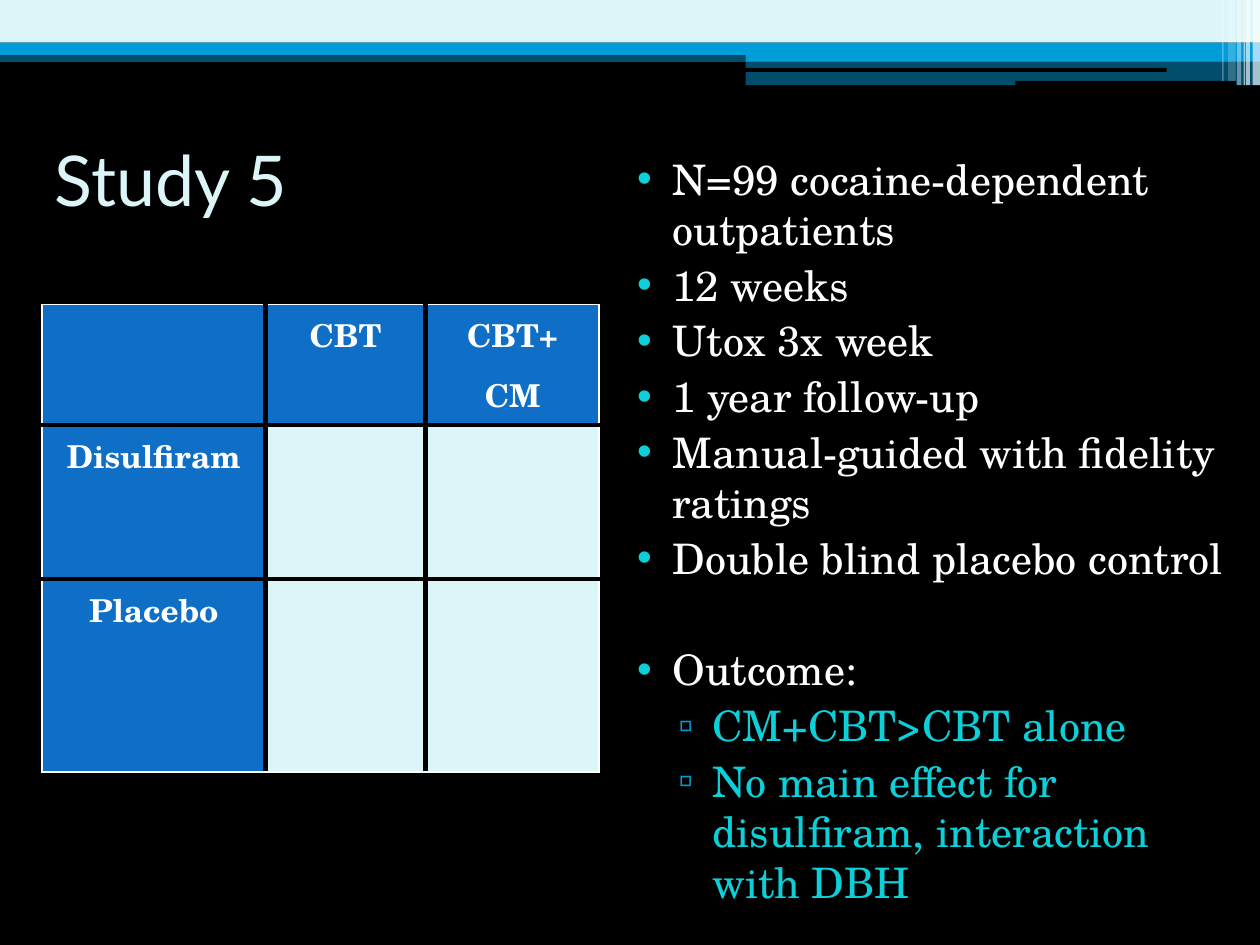
import pptx
import pptx.util
import pptx.dml.color
import pptx.enum.shapes
import pptx.enum.text
import pptx.oxml
import pptx.oxml.ns
import lxml.etree

Cm = pptx.util.Cm
Pt = pptx.util.Pt
SHAPE = pptx.enum.shapes.MSO_SHAPE
ALIGN = pptx.enum.text.PP_ALIGN
ANCHOR = pptx.enum.text.MSO_ANCHOR

BLACK, WHITE = "000000", "FFFFFF"
PALE, BLUE, SKY, AQUA = "DBF5F9", "0F6FC6", "009DD9", "0BD0D9"
SERIF = "TeX Gyre Schola"


def rgb(value):
    return pptx.dml.color.RGBColor.from_string(value)


def sub(parent, tag, **attrs):
    el = lxml.etree.SubElement(parent, pptx.oxml.ns.qn(tag))
    for name, value in attrs.items():
        el.set(name, str(value))
    return el


def add_text(p, text, font=SERIF, size=24, color=WHITE, bold=False,
             align=ALIGN.LEFT, before=0, after=0):
    p.alignment = align
    p.space_before, p.space_after = Pt(before), Pt(after)
    r = p.add_run()
    r.text = text
    r.font.name, r.font.size, r.font.bold = font, Pt(size), bold
    r.font.color.rgb = rgb(color)


def add_bullet(p, char, color, left, hanging):
    pPr = p._p.get_or_add_pPr()
    pPr.set("marL", str(Cm(left)))
    pPr.set("indent", str(-Cm(hanging)))
    sub(sub(pPr, "a:buClr"), "a:srgbClr", val=color)
    sub(pPr, "a:buFont", typeface="Arial")
    sub(pPr, "a:buChar", char=char)


def place(sp, box):
    sp.left, sp.top, sp.width, sp.height = (Cm(v) for v in box)


def add_block(s, box, color, alpha=100, kind=SHAPE.RECTANGLE):
    sp = s.shapes.add_shape(kind, *(Cm(v) for v in box))
    sp.shadow.inherit = False
    sp.line.fill.background()
    sp.fill.solid()
    sp.fill.fore_color.rgb = rgb(color)
    if alpha < 100:
        clr = sp._element.spPr.find(".//" + pptx.oxml.ns.qn("a:srgbClr"))
        sub(clr, "a:alpha", val=alpha * 1000)


def add_banner(s, box):
    x, y, w, h = box
    half = 15.03
    add_block(s, (x, y + 1.02, w, 0.23), SKY, 50)
    add_block(s, (x, y, w, 0.86), PALE)
    add_block(s, (x, y + 0.86, w, 0.25), SKY)
    add_block(s, (x + half, y + 0.99, w - half, 0.25), SKY)
    add_block(s, (x + half, y + 1.23, w - half, h - 1.23), SKY, 50)
    for left, top, width, height in ((15.01, 1.37, 8.51, 0.08),
                                     (20.47, 1.63, 4.45, 0.1)):
        add_block(s, (x + left, y + top, width, height), BLACK,
                  kind=SHAPE.ROUNDED_RECTANGLE)
    stripes = ((0.15, 0.15, h, 65), (0.28, 0.08, h, 65), (0.33, 0.03, h, 60),
               (0.46, 0.08, h, 40), (0.64, 0.15, 1.63, 20), (0.76, 0.03, 1.63, 30))
    for from_right, width, height, alpha in stripes:
        add_block(s, (x + w - from_right, y, width, height), WHITE, alpha)


def add_title(s, box, text):
    sp = s.shapes.title
    place(sp, box)
    tf = sp.text_frame
    tf.word_wrap = True
    tf.vertical_anchor = ANCHOR.MIDDLE
    add_text(tf.paragraphs[0], text, font="Lato", size=40, color=PALE)


def set_borders(cell, edges):
    tcPr = cell._tc.get_or_add_tcPr()
    for i, (side, outer) in enumerate(edges):
        color, width = (WHITE, 1) if outer else (BLACK, 3)
        ln = pptx.oxml.parse_xml(
            f'<a:ln{side} {pptx.oxml.ns.nsdecls("a")} w="{Pt(width)}">'
            f'<a:solidFill><a:srgbClr val="{color}"/></a:solidFill></a:ln{side}>')
        tcPr.insert(i, ln)


def add_design_table(s, box, rows, col_widths, row_heights):
    shape = s.shapes.add_table(len(rows), len(col_widths), *(Cm(v) for v in box))
    table = shape.table
    table.first_row = table.horz_banding = False
    for col, width in zip(table.columns, col_widths):
        col.width = Cm(width)
    for row, height in zip(table.rows, row_heights):
        row.height = Cm(height)
    last_row, last_col = len(rows) - 1, len(col_widths) - 1
    for i, row in enumerate(rows):
        for j, lines in enumerate(row):
            cell = table.cell(i, j)
            cell.fill.solid()
            cell.fill.fore_color.rgb = rgb(BLUE if i == 0 or j == 0 else PALE)
            set_borders(cell, (("L", j == 0), ("R", j == last_col),
                               ("T", i == 0), ("B", i == last_row)))
            tf = cell.text_frame
            for n, line in enumerate(lines):
                p = tf.add_paragraph() if n else tf.paragraphs[0]
                add_text(p, line, size=18, bold=True, align=ALIGN.CENTER,
                         before=4, after=2)


def add_bullets(s, box, items):
    sp = s.placeholders[1]
    place(sp, box)
    tf = sp.text_frame
    tf.word_wrap = True
    tf.auto_size = pptx.enum.text.MSO_AUTO_SIZE.NONE
    tf.vertical_anchor = ANCHOR.TOP
    for n, (level, text, before) in enumerate(items):
        p = tf.add_paragraph() if n else tf.paragraphs[0]
        p.level = level
        add_text(p, text, color=AQUA if level else WHITE, before=before)
        if level:
            add_bullet(p, "▫", SKY, 1.83, 0.69)
        else:
            add_bullet(p, "•", AQUA, 1.02, 0.71)


def main():
    prs = pptx.Presentation()
    prs.slide_width, prs.slide_height = Cm(25.4), Cm(19.05)
    s = prs.slides.add_slide(prs.slide_layouts[1])
    s.background.fill.solid()
    s.background.fill.fore_color.rgb = rgb(BLACK)

    add_banner(s, (0, 0, 25.4, 1.72))
    add_title(s, (0.85, 2.12, 22.86, 2.96), "Study 5")
    add_design_table(
        s, (0.85, 6.14, 11.23, 9.17),
        [[[], ["CBT"], ["CBT+", "CM"]],
         [["Disulfiram"], [], []],
         [["Placebo"], [], []]],
        (4.5, 3.23, 3.5), (2.18, 3.1, 3.89))
    add_bullets(s, (12.28, 2.96, 12.7, 12.91), [
        (0, "N=99 cocaine-dependent outpatients", 3),
        (0, "12 weeks", 3),
        (0, "Utox 3x week", 3),
        (0, "1 year follow-up", 3),
        (0, "Manual-guided with fidelity ratings", 3),
        (0, "Double blind placebo control", 3),
        (0, "Outcome:", 35),
        (1, "CM+CBT>CBT alone", 3),
        (1, "No main effect for disulfiram, interaction with DBH", 3),
    ])
    prs.save("out.pptx")


if __name__ == "__main__":
    main()
